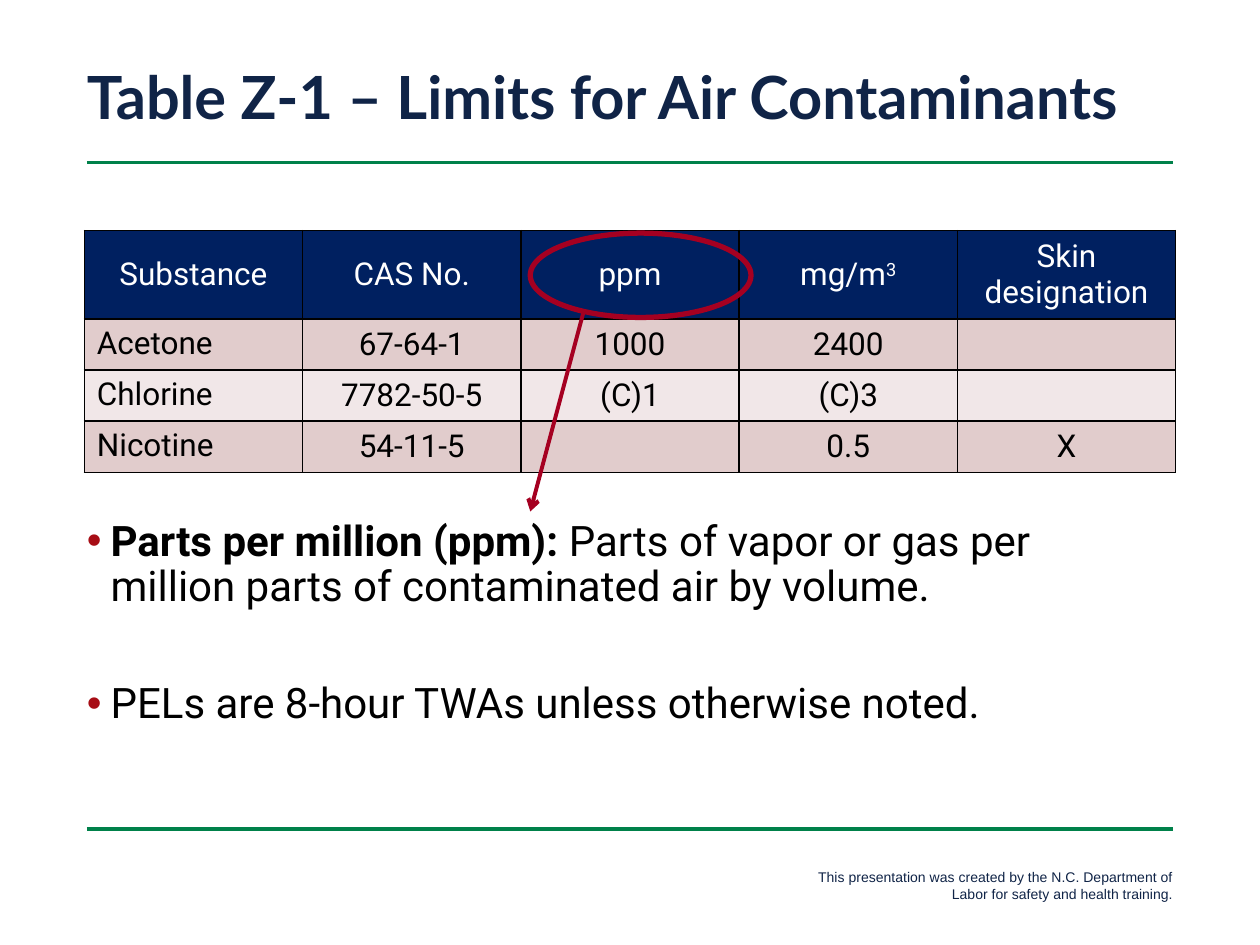
from collections import namedtuple
from dataclasses import dataclass

from lxml.etree import SubElement
from pptx import Presentation
from pptx.dml.color import RGBColor
from pptx.enum.shapes import MSO_CONNECTOR, MSO_SHAPE
from pptx.enum.text import MSO_ANCHOR, PP_ALIGN
from pptx.oxml import parse_xml
from pptx.oxml.ns import nsdecls, qn
from pptx.util import Cm, Pt

Box = namedtuple("Box", "left top width height")


@dataclass(frozen=True)
class Theme:
    navy: str = "102447"
    header: str = "002060"
    green: str = "00814A"
    red: str = "A50021"
    bullet: str = "A70D15"
    black: str = "000000"
    white: str = "FFFFFF"
    bands: tuple = ("E1CCCC", "F1E7E8")
    title_font: str = "Lato"
    body_font: str = "Roboto"
    footer_font: str = "Arial"
    title_size: int = 34
    body_size: int = 24
    table_size: int = 18
    footer_size: int = 8


THEME = Theme()
ROWS = (
    ("Substance", "CAS No.", "ppm", "mg/m", "Skin designation"),
    ("Acetone", "67-64-1", "1000", "2400", ""),
    ("Chlorine", "7782-50-5", "(C)1", "(C)3", ""),
    ("Nicotine", "54-11-5", "", "0.5", "X"),
)


def set_font(font, name, size, color, bold=False):
    font.name = name
    font.size = Pt(size)
    font.bold = bold
    font.color.rgb = RGBColor.from_string(color)


def add_line(page, start, end, color, weight):
    points = [Cm(value) for value in (*start, *end)]
    line = page.shapes.add_connector(MSO_CONNECTOR.STRAIGHT, *points)
    line.line.color.rgb = RGBColor.from_string(color)
    line.line.width = Pt(weight)
    SubElement(line._element.spPr, qn("a:effectLst"))
    return line


def add_rule(page, left, top, width):
    add_line(page, (left, top), (left + width, top), THEME.green, 2)


def add_text_frame(page, box):
    frame = page.shapes.add_textbox(*(Cm(value) for value in box)).text_frame
    frame.word_wrap = True
    return frame


def add_title(page, box):
    frame = add_text_frame(page, box)
    frame.vertical_anchor = MSO_ANCHOR.MIDDLE
    para = frame.paragraphs[0]
    para.text = "Table Z-1 – Limits for Air Contaminants"
    para.line_spacing = 0.9
    set_font(para.font, THEME.title_font, THEME.title_size, THEME.navy, True)
    add_rule(page, box.left + 0.25, box.top + 2.01, box.width - 0.5)


def add_footer(page, box):
    add_rule(page, box.left + 0.25, box.top, box.width - 0.5)
    note_width = 8.26
    note = Box(box.left + box.width - note_width, box.top + 0.67,
               note_width, box.height - 0.67)
    para = add_text_frame(page, note).paragraphs[0]
    para.text = ("This presentation was created by the N.C. Department of "
                 "Labor for safety and health training.")
    para.alignment = PP_ALIGN.RIGHT
    set_font(para.font, THEME.footer_font, THEME.footer_size, THEME.navy)


def add_cell_borders(cell):
    properties = cell._tc.get_or_add_tcPr()
    for index, side in enumerate("LRTB"):
        properties.insert(index, parse_xml(
            f'<a:ln{side} {nsdecls("a")} w="12700"><a:solidFill>'
            f'<a:srgbClr val="{THEME.black}"/></a:solidFill></a:ln{side}>'))


def fill_cell(cell, text, row, column):
    is_header = row == 0
    is_name = column == 0 and not is_header
    cell.fill.solid()
    cell.fill.fore_color.rgb = RGBColor.from_string(
        THEME.header if is_header else THEME.bands[(row - 1) % 2])
    add_cell_borders(cell)
    cell.vertical_anchor = MSO_ANCHOR.TOP if is_name else MSO_ANCHOR.MIDDLE
    para = cell.text_frame.paragraphs[0]
    para.text = text
    para.alignment = PP_ALIGN.LEFT if is_name else PP_ALIGN.CENTER
    set_font(para.font, THEME.body_font, THEME.table_size,
             THEME.white if is_header else THEME.black)


def add_limits_table(page, box):
    header_height = 1.78
    row_height = (box.height - header_height) / (len(ROWS) - 1)
    table = page.shapes.add_table(
        len(ROWS), len(ROWS[0]), *(Cm(value) for value in box)).table
    for column in table.columns:
        column.width = Cm(box.width / len(ROWS[0]))
    for row_index, texts in enumerate(ROWS):
        table.rows[row_index].height = Cm(
            row_height if row_index else header_height)
        for column_index, text in enumerate(texts):
            fill_cell(table.cell(row_index, column_index), text,
                      row_index, column_index)
    exponent = table.cell(0, 3).text_frame.paragraphs[0].add_run()
    exponent.text = "3"
    exponent._r.get_or_add_rPr().set("baseline", "30000")


def add_callout(page, box):
    ring = page.shapes.add_shape(
        MSO_SHAPE.OVAL, *(Cm(value) for value in box))
    ring.shadow.inherit = False
    ring.fill.background()
    ring.line.color.rgb = RGBColor.from_string(THEME.red)
    ring.line.width = Pt(3)
    arrow = add_line(page, (box.left + 1.07, box.top + 1.6),
                     (box.left, box.top + 5.61), THEME.red, 2.25)
    SubElement(arrow.line._get_or_add_ln(), qn("a:tailEnd"), type="arrow")


def add_bullet(para):
    properties = para._p.get_or_add_pPr()
    indent = Cm(0.48)
    properties.set("marL", str(indent))
    properties.set("indent", str(-indent))
    color = SubElement(properties, qn("a:buClr"))
    SubElement(color, qn("a:srgbClr"), val=THEME.bullet)
    SubElement(properties, qn("a:buFont"), typeface=THEME.footer_font)
    SubElement(properties, qn("a:buChar"), char="•")


def add_definitions(page, box):
    frame = add_text_frame(page, box)
    items = (
        ("Parts per million (ppm): ", "Parts of vapor or gas per million "
         "parts of contaminated air by volume."),
        ("", "PELs are 8-hour TWAs unless otherwise noted."),
    )
    for index, (term, meaning) in enumerate(items):
        para = frame.add_paragraph() if index else frame.paragraphs[0]
        add_bullet(para)
        para.line_spacing = 0.9
        if index:
            para.space_before = Pt(41)
        set_font(para.font, THEME.body_font, THEME.body_size, THEME.black)
        if term:
            span = para.add_run()
            span.text = term
            span.font.bold = True
        para.add_run().text = meaning


def main():
    deck = Presentation()
    deck.slide_width, deck.slide_height = Cm(25.4), Cm(19.05)
    page = deck.slides.add_slide(deck.slide_layouts[6])
    add_title(page, Box(1.5, 1.27, 22.4, 1.5))
    add_limits_table(page, Box(1.7, 4.65, 22, 4.87))
    add_callout(page, Box(10.69, 4.7, 4.45, 1.7))
    add_definitions(page, Box(1.5, 10.36, 22.2, 5.5))
    add_footer(page, Box(1.5, 16.71, 22.4, 1.6))
    deck.save("out.pptx")


if __name__ == "__main__":
    main()
